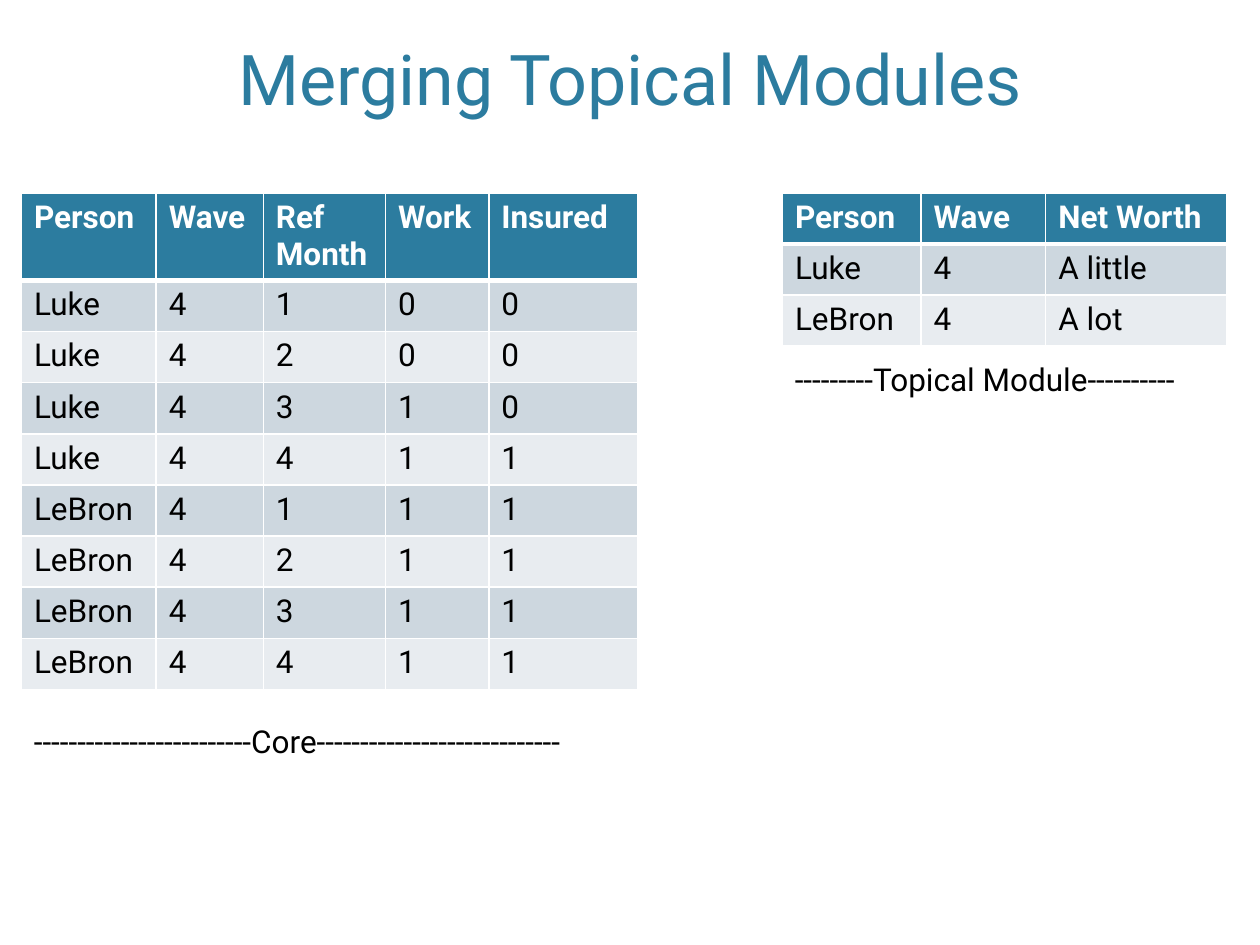
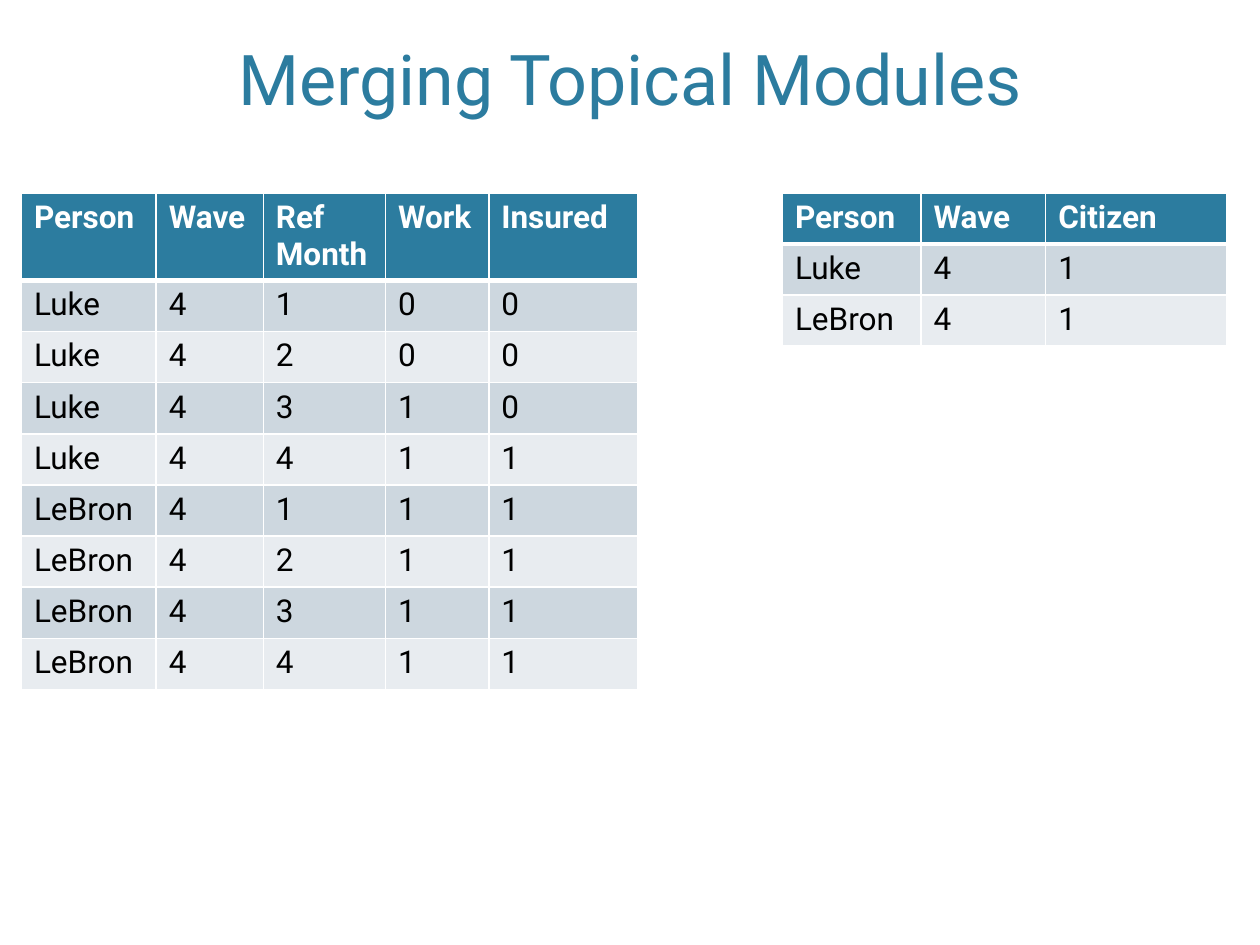
from lxml import etree
from pptx import Presentation
from pptx import util as u
from pptx.dml import color
from pptx.enum import text
from pptx.oxml import ns

# Shared style
FONT = "Roboto"
TEAL, WHITE, BLACK = "2C7C9F", "FFFFFF", "000000"
BANDS = ("CDD7DF", "E8ECF0")

# Grid of 100 columns and 75 rows
COLUMNS, ROWS = 100, 75
LEFT_TABLE, RIGHT_TABLE, TABLE_TOP = 1.7, 62.1, 15.3
CORE_WIDTHS = (10.7, 8.5, 9.7, 8.2, 11.8)
TOPICAL_WIDTHS = (11, 9.9, 14.4)
LINE_ROW, TWO_LINE_ROW = 4.06, 6.95

# Table contents
TITLE = "Merging Topical Modules"
CORE_HEADER = ("Person", "Wave", "Ref Month", "Work", "Insured")
WORK_AND_INSURED = {
    "Luke": ((0, 0), (0, 0), (1, 0), (1, 1)),
    "LeBron": ((1, 1),) * 4,
}
CORE_ROWS = [
    (person, 4, month, work, insured)
    for person, months in WORK_AND_INSURED.items()
    for month, (work, insured) in enumerate(months, start=1)
]


def rgb(value):
    return color.RGBColor.from_string(value)


def write(frame, words, size=18, fill=BLACK, bold=False, align=text.PP_ALIGN.LEFT):
    paragraph = frame.paragraphs[0]
    paragraph.alignment = align
    run = paragraph.add_run()
    run.text = str(words)
    run.font.name = FONT
    run.font.size = u.Pt(size)
    run.font.bold = bold
    run.font.color.rgb = rgb(fill)


def add_borders(cell, **points):
    """Draw white cell borders; keywords L, R, T and B give widths in points."""
    properties = cell._tc.get_or_add_tcPr()
    for side, width in points.items():
        line = etree.SubElement(properties, ns.qn(f"a:ln{side}"), w=str(u.Pt(width)))
        solid = etree.SubElement(line, ns.qn("a:solidFill"))
        etree.SubElement(solid, ns.qn("a:srgbClr"), val=WHITE)


class Deck:
    def __init__(self):
        self.presentation = Presentation()
        self.presentation.slide_width = u.Inches(10)
        self.presentation.slide_height = u.Inches(7.5)
        self.slide = None

    def x(self, columns):
        return round(self.presentation.slide_width * columns / COLUMNS)

    def y(self, rows):
        return round(self.presentation.slide_height * rows / ROWS)

    def box(self, left, top, width, height):
        return self.x(left), self.y(top), self.x(width), self.y(height)

    def add_slide(self, title):
        layout = self.presentation.slide_layouts[5]
        self.slide = self.presentation.slides.add_slide(layout)
        shape = self.slide.shapes.title
        shape.left, shape.top, shape.width, shape.height = self.box(6, 1.2, 88, 8.8)
        frame = shape.text_frame
        frame.auto_size = text.MSO_AUTO_SIZE.NONE
        frame.vertical_anchor = text.MSO_ANCHOR.BOTTOM
        write(frame, title, size=40, fill=TEAL, align=text.PP_ALIGN.CENTER)

    def add_table(self, left, widths, header, rows, header_height=LINE_ROW):
        height = header_height + LINE_ROW * len(rows)
        place = self.box(left, TABLE_TOP, sum(widths), height)
        table = self.slide.shapes.add_table(len(rows) + 1, len(header), *place).table
        for column, width in zip(table.columns, widths):
            column.width = self.x(width)
        for index, values in enumerate([header, *rows]):
            is_header = index == 0
            table.rows[index].height = self.y(header_height if is_header else LINE_ROW)
            for cell, value in zip(table.rows[index].cells, values):
                add_borders(cell, L=1, R=1, T=3 if index == 1 else 1,
                            B=3 if is_header else 1)
                cell.fill.solid()
                cell.fill.fore_color.rgb = rgb(TEAL if is_header else BANDS[(index - 1) % 2])
                write(cell.text_frame, value, fill=WHITE if is_header else BLACK,
                      bold=is_header)

    def add_caption(self, left, top, width, words):
        shape = self.slide.shapes.add_textbox(*self.box(left, top, width, 4))
        shape.text_frame.word_wrap = True
        shape.text_frame.auto_size = text.MSO_AUTO_SIZE.SHAPE_TO_FIT_TEXT
        write(shape.text_frame, words)

    def add_merge_slide(self, topic, luke, lebron):
        """Show the core table beside one topical table."""
        self.add_slide(TITLE)
        self.add_table(LEFT_TABLE, CORE_WIDTHS, CORE_HEADER, CORE_ROWS, TWO_LINE_ROW)
        self.add_table(RIGHT_TABLE, TOPICAL_WIDTHS, ("Person", "Wave", topic),
                       [("Luke", 4, luke), ("LeBron", 4, lebron)])


def main():
    deck = Deck()

    # Net worth, with captions under both tables
    deck.add_merge_slide("Net Worth", "A little", "A lot")
    deck.add_caption(LEFT_TABLE, 56.8, sum(CORE_WIDTHS),
                     "-------------------------Core----------------------------")
    deck.add_caption(RIGHT_TABLE, 28.1, sum(TOPICAL_WIDTHS),
                     "---------Topical Module----------")

    # Citizenship
    deck.add_merge_slide("Citizen", 1, 1)

    deck.presentation.save("out.pptx")


if __name__ == "__main__":
    main()
